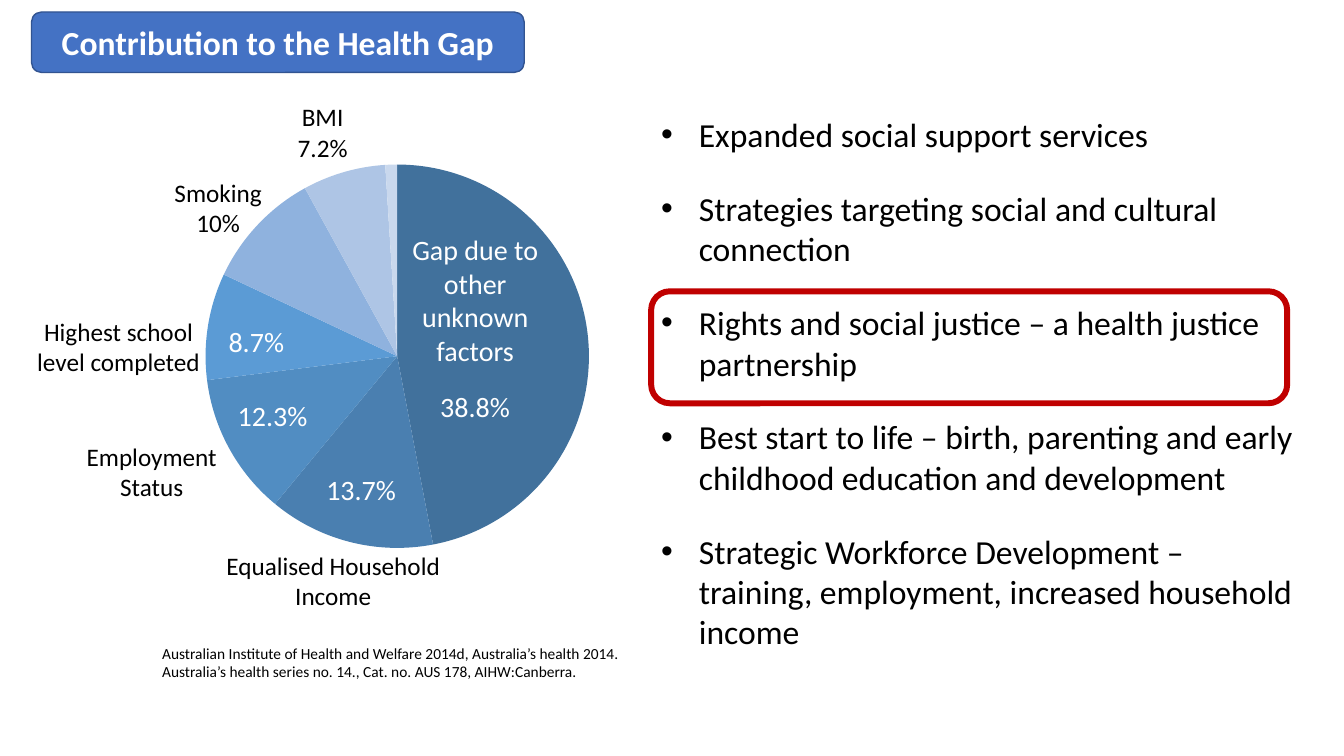
from lxml.etree import SubElement
from pptx import Presentation
from pptx.chart.data import CategoryChartData
from pptx.dml.color import RGBColor
from pptx.enum.chart import XL_CHART_TYPE
from pptx.enum.shapes import MSO_SHAPE
from pptx.enum.text import MSO_ANCHOR, PP_ALIGN
from pptx.oxml.ns import qn
from pptx.util import Pt


def color(code):
    return RGBColor.from_string(code)


def write(shape, text, size=18, ink="000000", bold=False, align=PP_ALIGN.LEFT,
          anchor=MSO_ANCHOR.TOP, bullet=False, gap=0):
    frame = shape.text_frame
    frame.word_wrap = True
    frame.vertical_anchor = anchor
    for i, line in enumerate(text.split("\n")):
        para = frame.add_paragraph() if i else frame.paragraphs[0]
        para.text = line
        para.alignment = align
        if i and gap:
            para.space_before = Pt(gap)
        if bullet:
            props = para._p.get_or_add_pPr()
            props.set("marL", str(Pt(27)))
            props.set("indent", str(Pt(-27)))
            SubElement(props, qn("a:buFont")).set("typeface", "Arial")
            SubElement(props, qn("a:buChar")).set("char", "•")
        font = para.font
        font.name = "Calibri"
        font.size = Pt(size)
        font.bold = bold
        font.color.rgb = color(ink)


deck = Presentation()
deck.slide_width = Pt(960)
deck.slide_height = Pt(540)
slide = deck.slides.add_slide(deck.slide_layouts[6])
shapes = slide.shapes

source = shapes.add_textbox(Pt(108.7), Pt(456.5), Pt(351.4), Pt(34))
write(source, "Australian Institute of Health and Welfare 2014d, Australia’s health 2014. "
      "Australia’s health series no. 14., Cat. no. AUS 178, AIHW:Canberra.", size=11)

title = shapes.add_shape(MSO_SHAPE.ROUNDED_RECTANGLE, Pt(22.5), Pt(8.6), Pt(352), Pt(43.2))
title.shadow.inherit = False
title.fill.solid()
title.fill.fore_color.rgb = color("4472C4")
title.line.color.rgb = color("325491")
title.line.width = Pt(1)
write(title, "Contribution to the Health Gap", size=24, ink="FFFFFF", bold=True,
      align=PP_ALIGN.CENTER, anchor=MSO_ANCHOR.MIDDLE)

data = CategoryChartData()
data.categories = ["1", "2", "3", "4", "5", "6", "7"]
data.add_series("Series 1", [47, 14, 12, 9, 10, 7, 1])
chart = shapes.add_chart(XL_CHART_TYPE.PIE, Pt(82), Pt(108.7), Pt(399.6), Pt(294.5), data).chart
chart.has_legend = False
chart.has_title = False
chart.font.name = "Calibri"
chart.font.size = Pt(10)
chart.font.color.rgb = color("000000")
pie = chart.plots[0]
pie.vary_by_categories = True
blues = ["41719C", "4A7FB0", "518DC2", "5B9BD5", "8FB2DE", "AEC5E5", "C9D8ED"]
for i, blue in enumerate(blues):
    slice = pie.series[0].points[i].format
    slice.fill.solid()
    slice.fill.fore_color.rgb = color(blue)
    slice.line.fill.background()

area = chart._chartSpace.chart.plotArea
for old in area.findall(qn("c:layout")):
    area.remove(old)
layout = SubElement(area, qn("c:layout"))
area.insert(0, layout)
manual = SubElement(layout, qn("c:manualLayout"))
for tag, val in [("layoutTarget", "inner"), ("xMode", "edge"), ("yMode", "edge"),
                 ("x", 0.16), ("y", 0.03), ("w", 0.69), ("h", 0.93)]:
    SubElement(manual, qn("c:" + tag)).set("val", str(val))

labels = [
    ("Equalised Household Income", 139, 389.5, 198, 51),
    ("Employment Status", 36.7, 311.8, 143.3, 50),
    ("Highest school level completed", 13, 222.5, 143.3, 50),
    ("Smoking\n10%", 84.2, 123, 143.3, 50),
    ("BMI 7.2%", 202.3, 69.1, 56.2, 54),
]
for text, x, y, w, h in labels:
    write(shapes.add_textbox(Pt(x), Pt(y), Pt(w), Pt(h)), text, align=PP_ALIGN.CENTER)

other = shapes.add_textbox(Pt(285.1), Pt(162.7), Pt(108.7), Pt(101.5))
write(other, "Gap due to other unknown factors", size=20, ink="FFFFFF", align=PP_ALIGN.CENTER)

shares = [("38.8%", 307.4, 275), ("13.7%", 226, 334), ("12.3%", 162.7, 280.8), ("8.7%", 156.2, 228.2)]
for text, x, y in shares:
    write(shapes.add_textbox(Pt(x), Pt(y), Pt(80), Pt(31.5)), text, size=20, ink="FFFFFF")

actions = [
    "Expanded social support services",
    "Strategies targeting social and cultural connection",
    "Rights and social justice – a health justice partnership",
    "Best start to life – birth, parenting and early childhood education and development",
    "Strategic Workforce Development – training, employment, increased household income",
]
panel = shapes.add_textbox(Pt(465.1), Pt(77.8), Pt(473), Pt(395.3))
write(panel, "\n".join(actions), size=24, bullet=True, gap=24)

frame = shapes.add_shape(MSO_SHAPE.ROUNDED_RECTANGLE, Pt(465.1), Pt(208.1), Pt(454.3), Pt(80))
frame.shadow.inherit = False
frame.fill.background()
frame.line.color.rgb = color("C00000")
frame.line.width = Pt(4.25)

deck.save("out.pptx")
